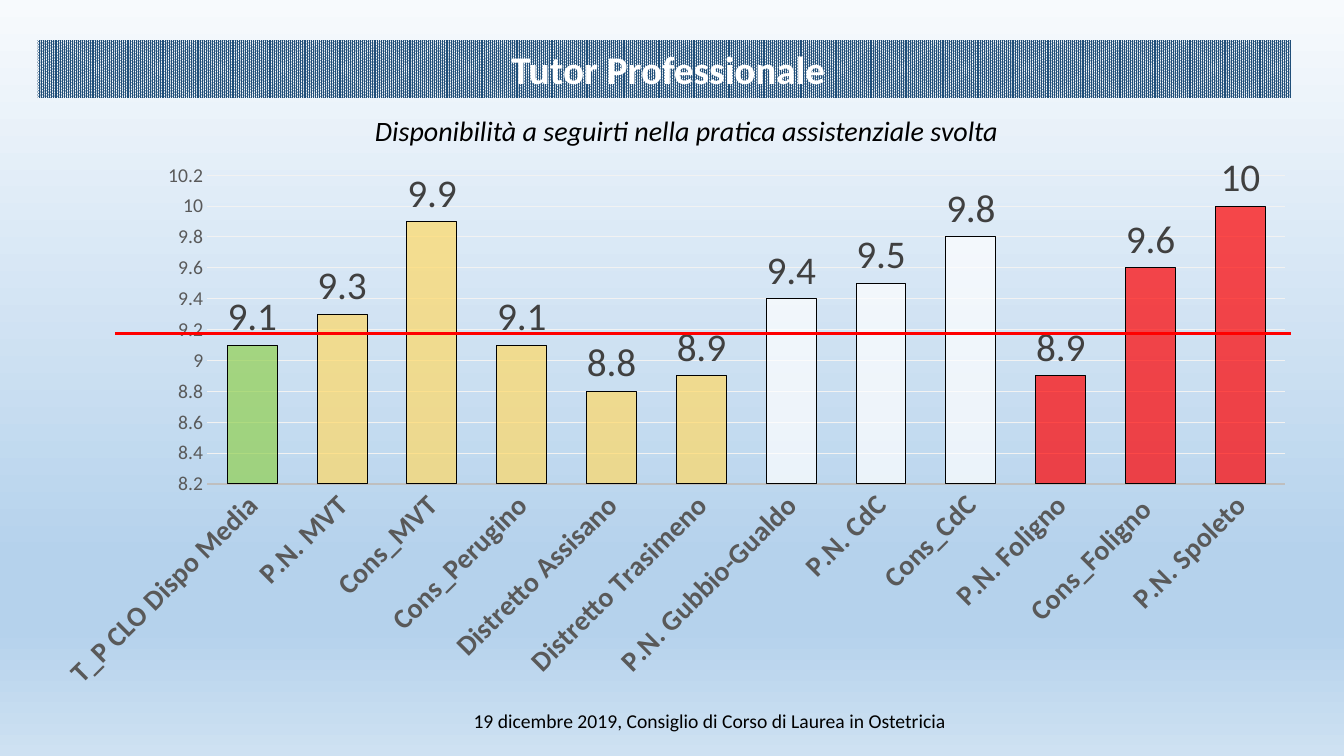
"""Build the tutor availability slide with its column chart."""
from dataclasses import dataclass

from pptx import Presentation
from pptx import util as u
from pptx.chart import data as cd
from pptx.dml.color import RGBColor
from pptx.enum import chart as ch, dml, shapes, text
from pptx.oxml import ns, xmlchemy as xc

FONT = "Calibri"
BLACK = RGBColor(0, 0, 0)
WHITE = RGBColor(255, 255, 255)
NAVY = RGBColor(0x1F, 0x4E, 0x79)
GREEN = RGBColor(0x92, 0xD0, 0x50)
YELLOW = RGBColor(0xFF, 0xD9, 0x66)
RED = RGBColor(255, 0, 0)
LABEL_GREY = RGBColor(0x40, 0x40, 0x40)
AXIS_GREY = RGBColor(0x59, 0x59, 0x59)
LINE_GREY = RGBColor(0xBF, 0xBF, 0xBF)
GRID_GREY = RGBColor(0xF2, 0xF2, 0xF2)
SKY_STOPS = (
    (0, RGBColor(0xF7, 0xFA, 0xFD)),
    (74, RGBColor(0xB5, 0xD2, 0xEC)),
    (83, RGBColor(0xB5, 0xD2, 0xEC)),
    (100, RGBColor(0xCE, 0xE1, 0xF2)),
)


@dataclass(frozen=True)
class Label:
    text: str
    box: tuple[float, float, float, float]
    size: int
    color: RGBColor = BLACK
    bold: bool = False
    italic: bool = False
    band: bool = False
    grow: bool = True
    anchor: text.MSO_ANCHOR = text.MSO_ANCHOR.TOP


@dataclass(frozen=True)
class Site:
    name: str
    score: float
    color: RGBColor


LABELS = (
    Label("Disponibilità a seguirti nella pratica assistenziale svolta",
          (1.8, 1.08, 10.02, 0.44), 20, italic=True),
    Label(" Tutor Professionale", (0.37, 0.4, 12.43, 0.57), 28, WHITE,
          bold=True, band=True),
    Label("19 dicembre 2019, Consiglio di Corso di Laurea in Ostetricia",
          (4.42, 6.95, 5.24, 0.4), 14, grow=False,
          anchor=text.MSO_ANCHOR.MIDDLE),
)
SITES = (
    Site("T_P CLO Dispo Media", 9.1, GREEN),
    Site("P.N. MVT", 9.3, YELLOW),
    Site("Cons_MVT", 9.9, YELLOW),
    Site("Cons_Perugino", 9.1, YELLOW),
    Site("Distretto Assisano", 8.8, YELLOW),
    Site("Distretto Trasimeno", 8.9, YELLOW),
    Site("P.N. Gubbio-Gualdo", 9.4, WHITE),
    Site("P.N. CdC", 9.5, WHITE),
    Site("Cons_CdC", 9.8, WHITE),
    Site("P.N. Foligno", 8.9, RED),
    Site("Cons_Foligno ", 9.6, RED),
    Site("P.N. Spoleto", 10, RED),
)


def set_font(font: text.MSO_ANCHOR, size: int, color: RGBColor,
             bold: bool = False, italic: bool = False) -> None:
    font.name, font.size = FONT, u.Pt(size)
    font.bold, font.italic = bold, italic
    font.color.rgb = color


def set_line(line, color: RGBColor, width: float) -> None:
    line.color.rgb = color
    line.width = u.Pt(width)


def add_child(parent: xc.BaseOxmlElement, tag: str, **attrs: str) -> xc.BaseOxmlElement:
    child = parent.makeelement(ns.qn(tag), attrs)
    parent.append(child)
    return child


def paint_background(s) -> None:
    fill = s.background.fill
    fill.gradient()
    fill.gradient_angle = 270
    stops = next(s.element.iter(ns.qn("a:gsLst")))
    for stop in list(stops):
        stops.remove(stop)
    for percent, color in SKY_STOPS:
        stop = add_child(stops, "a:gs", pos=str(percent * 1000))
        add_child(stop, "a:srgbClr", val=str(color))


def add_label(s, label: Label) -> None:
    box = [u.Inches(v) for v in label.box]
    if label.band:
        sp = s.shapes.add_shape(shapes.MSO_SHAPE.RECTANGLE, *box)
        sp.shadow.inherit = False
        sp.line.fill.background()
        sp.fill.patterned()
        sp.fill.pattern = dml.MSO_PATTERN.PERCENT_90
        sp.fill.fore_color.rgb = NAVY
        sp.fill.back_color.rgb = WHITE
    else:
        sp = s.shapes.add_textbox(*box)
    tf = sp.text_frame
    tf.text = label.text
    tf.word_wrap = True
    tf.vertical_anchor = label.anchor
    if label.grow:
        tf.auto_size = text.MSO_AUTO_SIZE.SHAPE_TO_FIT_TEXT
    p = tf.paragraphs[0]
    p.alignment = text.PP_ALIGN.CENTER
    set_font(p.runs[0].font, label.size, label.color, label.bold, label.italic)


def style_axes(chart) -> None:
    cat, val = chart.category_axis, chart.value_axis
    for axis in (cat, val):
        axis.major_tick_mark = axis.minor_tick_mark = ch.XL_TICK_MARK.NONE
    set_font(cat.tick_labels.font, 20, AXIS_GREY, bold=True)
    set_line(cat.format.line, LINE_GREY, 1.25)
    cat._element.txPr.bodyPr.set("rot", "-2700000")
    set_font(val.tick_labels.font, 14, AXIS_GREY)
    val.format.line.fill.background()
    val.minimum_scale, val.maximum_scale, val.major_unit = 8.2, 10.2, 0.2
    set_line(val.major_gridlines.format.line, GRID_GREY, 0.75)


def add_score_chart(s) -> None:
    data = cd.CategoryChartData()
    data.categories = [site.name for site in SITES]
    data.add_series("Series 1", [site.score for site in SITES])
    box = [u.Inches(v) for v in (0.37, 1.51, 12.63, 5.44)]
    chart = s.shapes.add_chart(ch.XL_CHART_TYPE.COLUMN_CLUSTERED, *box, data).chart
    chart.has_title = chart.has_legend = False
    set_font(chart.font, 10, BLACK)
    style_axes(chart)
    plot = chart.plots[0]
    plot.gap_width, plot.overlap, plot.vary_by_categories = 80, 25, False
    plot.has_data_labels = True
    labels = plot.data_labels
    labels.show_value = True
    labels.position = ch.XL_LABEL_POSITION.OUTSIDE_END
    set_font(labels.font, 28, LABEL_GREY)
    series = plot.series[0]
    for i, site in enumerate(SITES):
        fmt = series.points[i].format
        fmt.fill.solid()
        fmt.fill.fore_color.rgb = site.color
        set_line(fmt.line, BLACK, 0.75)
    for color in series._element.xpath("c:dPt/c:spPr/a:solidFill/a:srgbClr"):
        add_child(color, "a:alpha", val="70000")


def add_mean_line(s) -> None:
    ends = [u.Inches(v) for v in (1.14, 3.31, 12.8, 3.31)]
    line = s.shapes.add_connector(shapes.MSO_CONNECTOR.STRAIGHT, *ends)
    set_line(line.line, RED, 2.25)
    add_child(line._element.spPr, "a:effectLst")


def main() -> None:
    prs = Presentation()
    prs.slide_width, prs.slide_height = u.Inches(13.33), u.Inches(7.5)
    s = prs.slides.add_slide(prs.slide_layouts[6])
    paint_background(s)
    for label in LABELS:
        add_label(s, label)
    add_score_chart(s)
    add_mean_line(s)
    prs.save("out.pptx")


if __name__ == "__main__":
    main()
